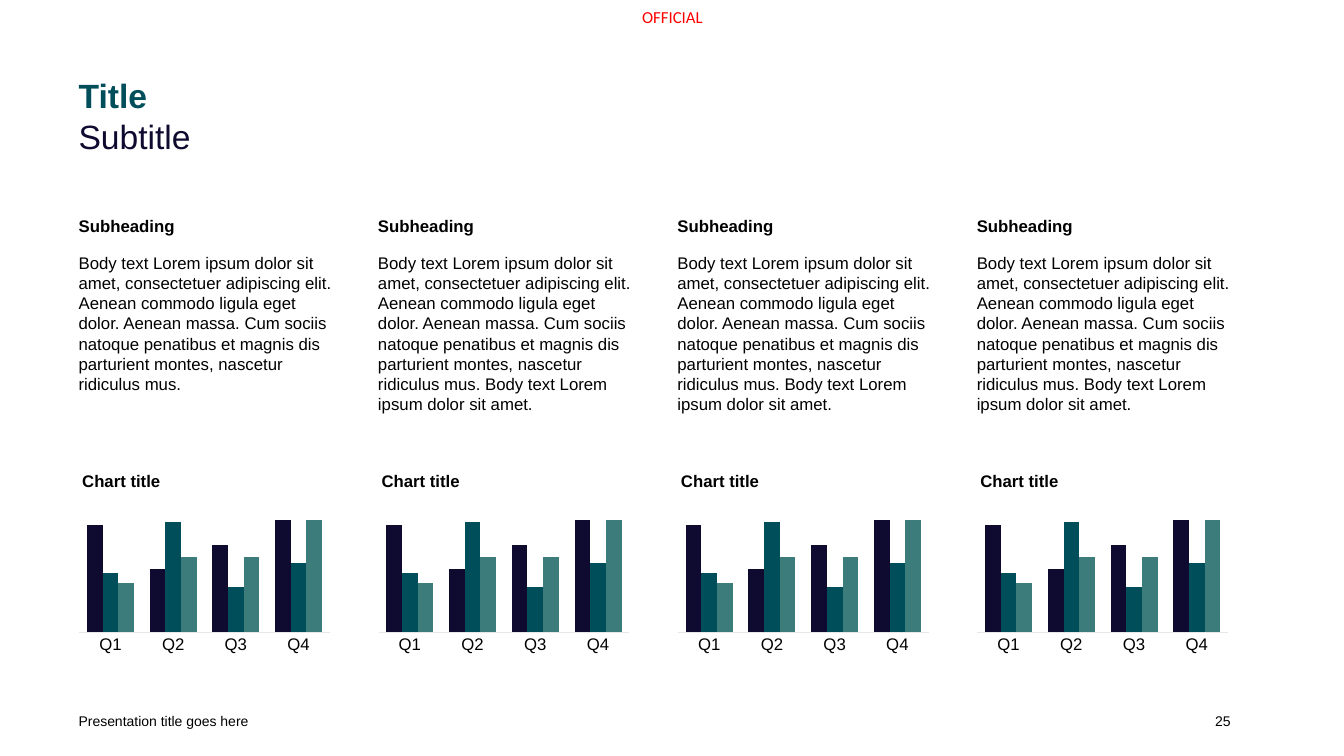
import pptx
import pptx.chart.data
import pptx.dml.color
import pptx.enum.chart
import pptx.enum.text
import pptx.oxml
import pptx.oxml.ns
import pptx.util
from dataclasses import dataclass

Pt = pptx.util.Pt
Align = pptx.enum.text.PP_ALIGN
Anchor = pptx.enum.text.MSO_ANCHOR


@dataclass(frozen=True)
class Theme:
    font: str = "Arial"
    mark_font: str = "Calibri"
    black: str = "000000"
    red: str = "FF0000"
    navy: str = "0F0A30"
    teal: str = "004E5A"
    sage: str = "3C7C7B"
    grey: str = "E6E7E8"
    head: int = 24
    body: int = 12
    foot: int = 10


THEME = Theme()

# Column grid, in points
LEFT, STEP, WIDE, TALL = 56.16, 213.84, 181.44, 150.48
TEXT_TOP, CHART_TOP = 154.08, 332.64

LOREM = ("Body text Lorem ipsum dolor sit amet, consectetuer adipiscing elit. "
         "Aenean commodo ligula eget dolor. Aenean massa. Cum sociis natoque "
         "penatibus et magnis dis parturient montes, nascetur ridiculus mus.")
EXTRA = " Body text Lorem ipsum dolor sit amet."
BODIES = [LOREM] + [LOREM + EXTRA] * 3

QUARTERS = ["Q1", "Q2", "Q3", "Q4"]
SERIES = [
    ("Series 1", (96, 56, 78, 100), THEME.navy),
    ("Series 2", (53, 98, 40, 62), THEME.teal),
    ("Series 3", (44, 67, 67, 100), THEME.sage),
]


def rgb(code):
    return pptx.dml.color.RGBColor.from_string(code)


def style(font, size, color, bold=False, name=THEME.font):
    font.size, font.bold, font.name = Pt(size), bold, name
    font.color.rgb = rgb(color)


def add_box(slide, box, lines, size, color=THEME.black, name=THEME.font,
            align=Align.LEFT, anchor=Anchor.TOP, wrap=True):
    """Add a text box; each line is (text, bold, space after)."""
    frame = slide.shapes.add_textbox(*map(Pt, box)).text_frame
    frame.margin_left = frame.margin_right = 0
    frame.margin_top = frame.margin_bottom = 0
    frame.word_wrap, frame.vertical_anchor = wrap, anchor
    frame.text = "\n".join(line[0] for line in lines)
    for para, (_, bold, after) in zip(frame.paragraphs, lines):
        para.alignment, para.space_after = align, Pt(after)
        style(para.runs[0].font, size, color, bold, name)
    return frame


def set_layout(part, **sizes):
    """Place a chart part by fractions of the chart's size."""
    for old in part.findall(pptx.oxml.ns.qn("c:layout")):
        part.remove(old)
    inner = '<c:layoutTarget val="inner"/>' if "w" in sizes else ""
    modes = "".join(f'<c:{key}Mode val="edge"/>' for key in "xy")
    places = "".join(f'<c:{key} val="{val}"/>' for key, val in sizes.items())
    layout = pptx.oxml.parse_xml(
        f'<c:layout {pptx.oxml.ns.nsdecls("c")}><c:manualLayout>'
        f'{inner}{modes}{places}</c:manualLayout></c:layout>')
    text = part.find(pptx.oxml.ns.qn("c:tx"))
    if text is None:
        part.insert(0, layout)
    else:
        text.addnext(layout)


def add_columns(slide, left):
    data = pptx.chart.data.CategoryChartData()
    data.categories = QUARTERS
    for name, values, _ in SERIES:
        data.add_series(name, values)
    chart = slide.shapes.add_chart(
        pptx.enum.chart.XL_CHART_TYPE.COLUMN_CLUSTERED,
        Pt(left), Pt(CHART_TOP), Pt(WIDE), Pt(TALL), data).chart
    style(chart.font, THEME.body, THEME.black)
    chart.has_legend = False

    # Title above the plot
    frame = chart.chart_title.text_frame
    frame.text = "Chart title"
    style(frame.paragraphs[0].runs[0].font, THEME.body, THEME.black, True)
    chart.chart_title.include_in_layout = False
    set_layout(chart.chart_title._element, x=0, y=0.01)

    # Bars
    plot = chart.plots[0]
    plot.gap_width, plot.overlap, plot.vary_by_categories = 100, 0, False
    for series, (_, _, color) in zip(plot.series, SERIES):
        series.format.fill.solid()
        series.format.fill.fore_color.rgb = rgb(color)
    area = chart._chartSpace.chart.plotArea
    set_layout(area, x=0, y=0.2, w=0.99, h=0.59)

    # Axes
    none = pptx.enum.chart.XL_TICK_MARK.NONE
    base, scale = chart.category_axis, chart.value_axis
    base.major_tick_mark = base.minor_tick_mark = none
    base.format.line.color.rgb = rgb(THEME.grey)
    base.format.line.width = Pt(0.75)
    style(base.tick_labels.font, THEME.body, THEME.black)
    scale.minimum_scale, scale.maximum_scale = 0, 111
    scale.has_major_gridlines = scale.visible = False


def main():
    deck = pptx.Presentation()
    deck.slide_width, deck.slide_height = Pt(960), Pt(540)
    slide = deck.slides.add_slide(deck.slide_layouts[6])

    # Marking and headings
    add_box(slide, (458.64, 5.04, 46.08, 14.4), [("OFFICIAL", False, 0)],
            THEME.body, THEME.red, THEME.mark_font, wrap=False)
    title = add_box(slide, (LEFT, 56.88, 824.4, 25.2), [("Title", True, 0)],
                    THEME.head, THEME.teal)
    title.paragraphs[0].line_spacing = 0.9
    add_box(slide, (LEFT, 82.8, 823, 25.2), [("Subtitle", False, 12)],
            THEME.head, THEME.navy)

    # Four columns of text and chart
    for index, body in enumerate(BODIES):
        left = LEFT + index * STEP
        add_box(slide, (left, TEXT_TOP, WIDE, TALL),
                [("Subheading", True, 12), (body, False, 6)], THEME.body)
        add_columns(slide, left)

    # Footer
    add_box(slide, (LEFT, 500.4, 324, 28.8),
            [("Presentation title goes here", False, 0)],
            THEME.foot, anchor=Anchor.MIDDLE)
    add_box(slide, (663.12, 500.4, 216, 28.8), [("25", False, 0)],
            THEME.foot, align=Align.RIGHT, anchor=Anchor.MIDDLE)

    deck.save("out.pptx")


if __name__ == "__main__":
    main()
